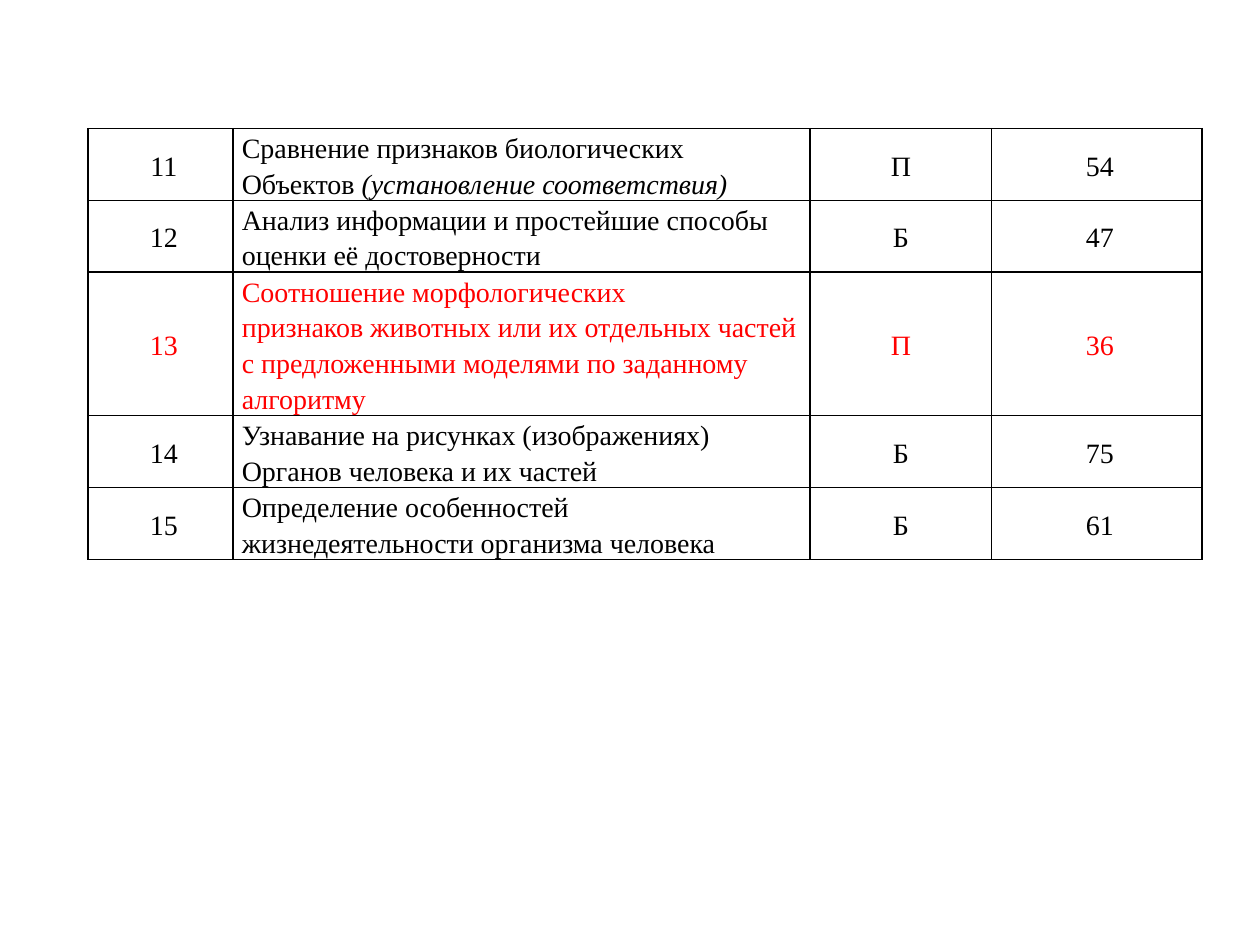
from dataclasses import dataclass

from lxml.etree import SubElement
from pptx import Presentation
from pptx.dml.color import RGBColor as RGB
from pptx.enum.text import MSO_ANCHOR as Anchor, PP_ALIGN as Align
from pptx.oxml.ns import qn
from pptx.util import Inches, Pt


@dataclass(frozen=True)
class Theme:
    """Colours, type and line sizes of the slide."""
    font: str = "Times New Roman"
    size: int = 16
    spacing: float = 1.15
    border: int = 1
    ink: str = "000000"
    alert: str = "FF0000"


COLUMNS = (1.15, 4.58, 1.44, 1.67)
LINE_HEIGHT = 0.285
NUMBER_INDENT = 0.05
ALERT_TASK = "13"
TASKS = [
    ("11", [["Сравнение признаков биологических"],
            ["Объектов ", "(установление соответствия)"]], "П", "54", 2),
    ("12", [["Анализ информации и простейшие способы оценки её достоверности"]],
     "Б", "47", 2),
    ("13", [["Соотношение морфологических"],
            ["признаков животных или их отдельных частей с предложенными "
             "моделями по заданному алгоритму"]], "П", "36", 4),
    ("14", [["Узнавание на рисунках (изображениях)"],
            ["Органов человека и их частей"]], "Б", "75", 2),
    ("15", [["Определение особенностей жизнедеятельности организма человека"]],
     "Б", "61", 2),
]


class Deck:
    """Holds the theme and the current slide."""

    def __init__(self, prs, theme):
        """Add a blank slide to the presentation."""
        self.theme = theme
        self.s = prs.slides.add_slide(prs.slide_layouts[6])

    def borders(self, cell):
        """Draw a solid line on all four sides of a cell."""
        pr = cell._tc.get_or_add_tcPr()
        for i, side in enumerate(("lnL", "lnR", "lnT", "lnB")):
            ln = pr.makeelement(qn(f"a:{side}"), w=str(Pt(self.theme.border)))
            fill = SubElement(ln, qn("a:solidFill"))
            SubElement(fill, qn("a:srgbClr"), val=self.theme.ink)
            pr.insert(i, ln)

    def cell(self, cell, lines, color, align, indent):
        """Fill a cell with paragraphs, the second run of each in italics."""
        cell.fill.background()
        self.borders(cell)
        cell.vertical_anchor = Anchor.MIDDLE
        cell.margin_left = cell.margin_right = Inches(0.07)
        cell.margin_top = cell.margin_bottom = 0
        tf = cell.text_frame
        for i, parts in enumerate(lines):
            p = tf.add_paragraph() if i else tf.paragraphs[0]
            p.alignment = align
            p.line_spacing = self.theme.spacing
            if indent:
                p._p.get_or_add_pPr().set("indent", str(Inches(indent)))
            for j, part in enumerate(parts):
                r = p.add_run()
                r.text = part
                r.font.name = self.theme.font
                r.font.size = Pt(self.theme.size)
                r.font.italic = j > 0
                r.font.color.rgb = RGB.from_string(color)

    def task_table(self, tasks, left, top):
        """Add the table of tasks, levels and results."""
        heights = [Inches(task[-1] * LINE_HEIGHT) for task in tasks]
        table = self.s.shapes.add_table(
            len(tasks), len(COLUMNS), Inches(left), Inches(top),
            Inches(sum(COLUMNS)), sum(heights)).table
        table.first_row = table.horz_banding = False
        for column, width in zip(table.columns, COLUMNS):
            column.width = Inches(width)
        for row, height, task in zip(table.rows, heights, tasks):
            row.height = height
            number, topic, level, result, _ = task
            color = self.theme.alert if number == ALERT_TASK else self.theme.ink
            contents = (
                ([[number]], Align.CENTER, NUMBER_INDENT),
                (topic, Align.LEFT, 0),
                ([[level]], Align.CENTER, 0),
                ([[result]], Align.CENTER, NUMBER_INDENT),
            )
            for cell, (lines, align, indent) in zip(row.cells, contents):
                self.cell(cell, lines, color, align, indent)


def main():
    """Build and save the slide."""
    prs = Presentation()
    prs.slide_width, prs.slide_height = Inches(10), Inches(7.5)
    Deck(prs, Theme()).task_table(TASKS, 0.7, 1.02)
    prs.save("out.pptx")


if __name__ == "__main__":
    main()
